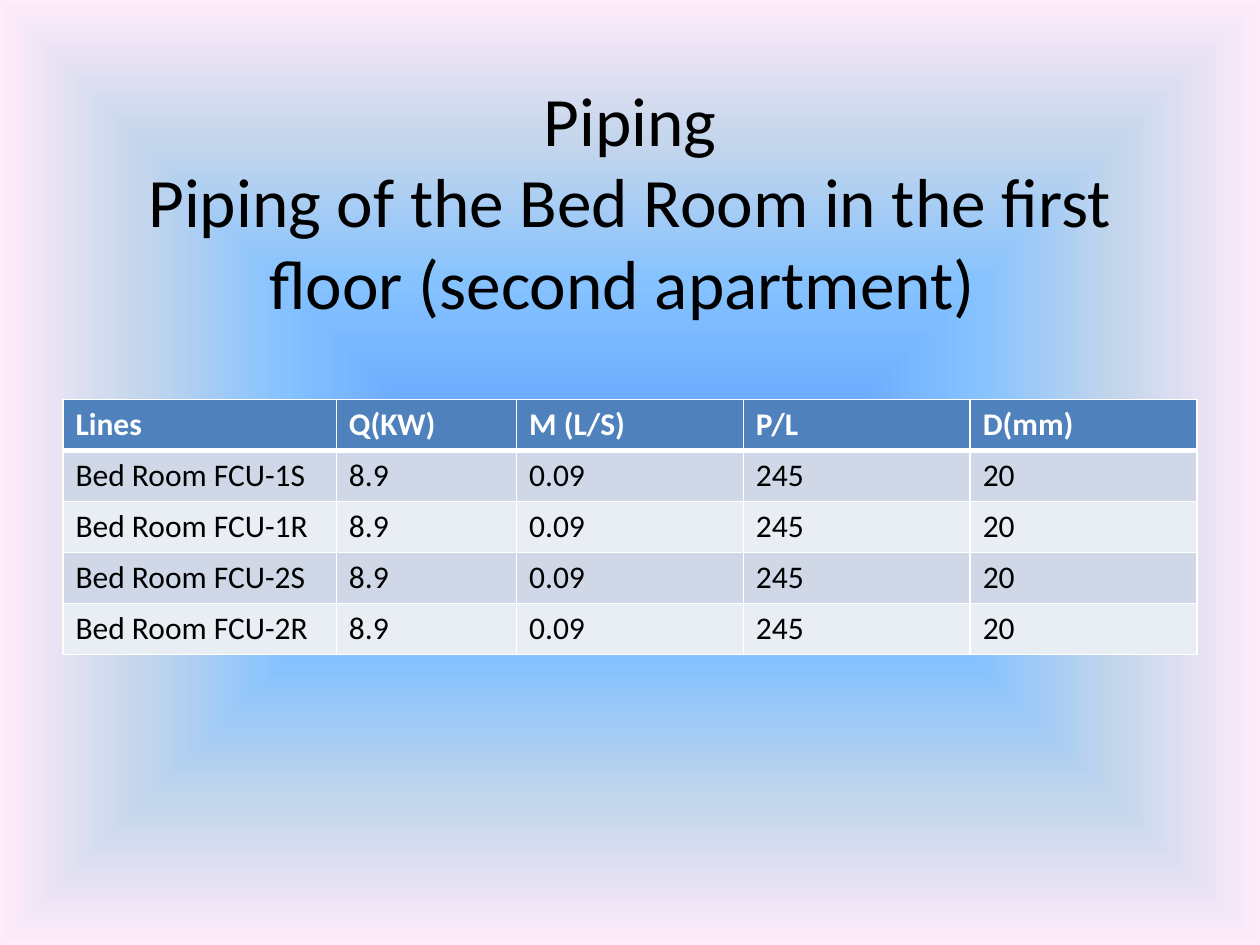
import pptx
import pptx.dml.color
import pptx.enum.text
import pptx.oxml
import pptx.oxml.ns
import pptx.util
from lxml import etree

COLORS = {
    "ink": "000000", "paper": "FFFFFF", "header": "4F81BD",
    "odd": "D0D8E8", "even": "E9EDF4",
}
BACKDROP = [(0, "5E9EFF"), (40, "85C2FF"), (70, "C4D6EB"), (100, "FFEBFA")]
TITLE = ["Piping", "Piping of the Bed Room in the first floor (second apartment) "]
HEADINGS = ["Lines", "Q(KW)", "M (L/S)", "P/L", "D(mm)"]
READINGS = ["8.9", "0.09", "245", "20"]
PIPES = ["1S", "1R", "2S", "2R"]
COLUMN_WIDTHS = [2.17, 1.43, 1.8, 1.8, 1.8]
ROW_HEIGHT = 0.405


class Deck:
    font = "Calibri"

    def __init__(self, width, height):
        self.presentation = pptx.Presentation()
        self.width = self.presentation.slide_width = pptx.util.Inches(width)
        self.height = self.presentation.slide_height = pptx.util.Inches(height)
        self.slide = self.presentation.slides.add_slide(self.presentation.slide_layouts[6])

    def frame(self, left, top, width, height):
        return (round(left * self.width), round(top * self.height),
                round(width * self.width), round(height * self.height))

    def color(self, name):
        return pptx.dml.color.RGBColor.from_string(COLORS[name])

    def background(self, stops):
        self.slide.background.fill.gradient()
        gradient = self.slide.element.find(".//" + pptx.oxml.ns.qn("a:gradFill"))
        for child in list(gradient):
            gradient.remove(child)
        stop_list = etree.SubElement(gradient, pptx.oxml.ns.qn("a:gsLst"))
        for position, shade in stops:
            stop = etree.SubElement(stop_list, pptx.oxml.ns.qn("a:gs"), pos=str(position * 1000))
            etree.SubElement(stop, pptx.oxml.ns.qn("a:srgbClr"), val=shade)
        spread = etree.SubElement(gradient, pptx.oxml.ns.qn("a:path"))
        spread.set("path", "shape")
        etree.SubElement(spread, pptx.oxml.ns.qn("a:fillToRect"),
                         **dict.fromkeys("ltrb", "50000"))

    def run(self, paragraph, words, size, color, bold=False):
        run = paragraph.add_run()
        run.text = words
        run.font.name = self.font
        run.font.size = pptx.util.Pt(size)
        run.font.bold = bold
        run.font.color.rgb = self.color(color)

    def title(self, lines, size, *share):
        body = self.slide.shapes.add_textbox(*self.frame(*share)).text_frame
        body.word_wrap = True
        body.vertical_anchor = pptx.enum.text.MSO_ANCHOR.MIDDLE
        paragraph = body.paragraphs[0]
        paragraph.alignment = pptx.enum.text.PP_ALIGN.CENTER
        paragraph.line_spacing = 0.98
        for index, line in enumerate(lines):
            if index:
                paragraph.add_line_break()
            self.run(paragraph, line, size, "ink")

    def borders(self, cell, top, bottom):
        properties = cell._tc.get_or_add_tcPr()
        edges = [("L", 1), ("R", 1), ("T", top), ("B", bottom)]
        for index, (side, points) in enumerate(edges):
            properties.insert(index, pptx.oxml.parse_xml(
                f'<a:ln{side} {pptx.oxml.ns.nsdecls("a")} w="{pptx.util.Pt(points)}">'
                f'<a:solidFill><a:srgbClr val="{COLORS["paper"]}"/></a:solidFill></a:ln{side}>'))

    def table(self, rows, widths, row_height, size, *share):
        grid = self.slide.shapes.add_table(len(rows), len(widths), *self.frame(*share)).table
        for column, width in zip(grid.columns, widths):
            column.width = pptx.util.Inches(width)
        for r, values in enumerate(rows):
            grid.rows[r].height = pptx.util.Inches(row_height)
            header = r == 0
            band = "header" if header else ("even", "odd")[r % 2]
            for c, value in enumerate(values):
                cell = grid.cell(r, c)
                cell.fill.solid()
                cell.fill.fore_color.rgb = self.color(band)
                self.borders(cell, 3 if r == 1 else 1, 3 if header else 1)
                self.run(cell.text_frame.paragraphs[0], value, size,
                         "paper" if header else "ink", header)


def main():
    deck = Deck(10, 7.5)
    deck.background(BACKDROP)
    deck.title(TITLE, 39.6, 0.05, 0.08, 0.9, 0.27)
    rows = [HEADINGS] + [[f"Bed Room FCU-{pipe}"] + READINGS for pipe in PIPES]
    deck.table(rows, COLUMN_WIDTHS, ROW_HEIGHT, 18, 0.05, 3.17 / 7.5, 0.9, 0.27)
    deck.presentation.save("out.pptx")


if __name__ == "__main__":
    main()
